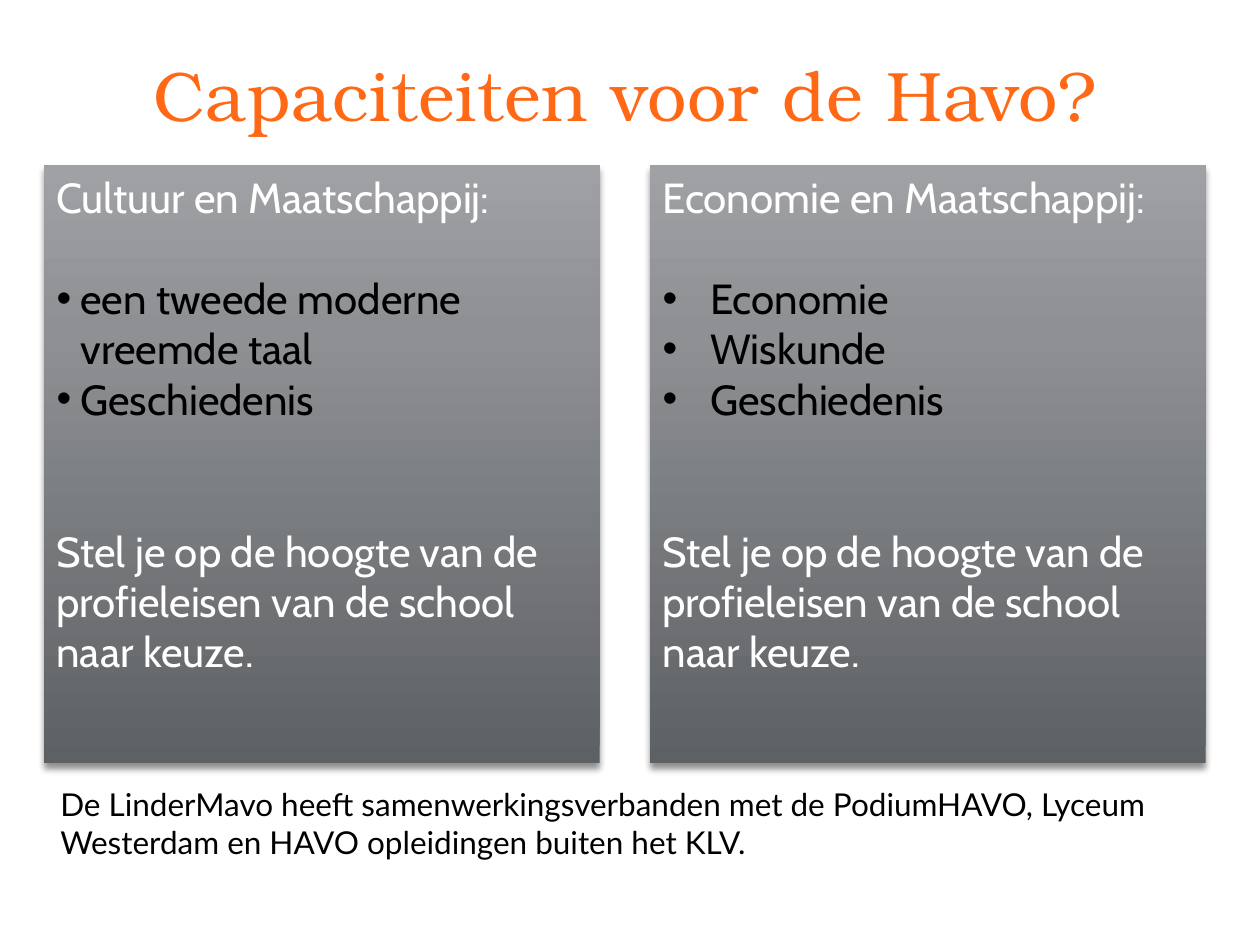
from dataclasses import dataclass

import lxml.etree
import pptx
import pptx.dml.color
import pptx.enum.shapes
import pptx.enum.text
import pptx.oxml.ns
import pptx.util
from pptx.util import Inches

qn = pptx.oxml.ns.qn


@dataclass(frozen=True)
class Theme:
    title_font: str = "TeX Gyre Bonum"
    panel_font: str = "Cabin"
    note_font: str = "Lato"
    title_size: int = 40
    panel_size: int = 24
    note_size: int = 18
    line_height: int = 29
    orange: str = "FF6815"
    black: str = "000000"
    white: str = "FFFFFF"
    panel_stops: tuple[tuple[int, str], ...] = ((0, "5E6164"), (72, "8E9093"), (100, "A0A1A4"))


@dataclass(frozen=True)
class Profile:
    name: str
    subjects: tuple[str, ...]
    bullet_indent: float


THEME = Theme()
ADVICE = "Stel je op de hoogte van de profieleisen van de school naar keuze."
PROFILES = (
    Profile("Cultuur en Maatschappij:", ("een tweede moderne vreemde taal", "Geschiedenis"), 0.19),
    Profile("Economie en Maatschappij:", ("Economie", "Wiskunde", "Geschiedenis"), 0.38),
)
PARTNERS = ("De LinderMavo heeft samenwerkingsverbanden met de PodiumHAVO, Lyceum "
            "Westerdam en HAVO opleidingen buiten het KLV.")
PANEL_LEFT, PANEL_TOP, PANEL_WIDTH, PANEL_HEIGHT = 0.35, 1.31, 4.41, 4.75
PANEL_STEP = 4.81


def style(paragraph, font_name: str, size: int, color: str) -> None:
    paragraph.font.name = font_name
    paragraph.font.size = pptx.util.Pt(size)
    paragraph.font.color.rgb = pptx.dml.color.RGBColor.from_string(color)


def add_color(parent, color: str):
    return lxml.etree.SubElement(parent, qn("a:srgbClr"), val=color)


def shade_panel(panel) -> None:
    """Give the panel its three-stop gradient and a soft shadow below it."""
    panel.fill.gradient()
    panel.fill.gradient_angle = 90
    stops = panel.element.spPr.find(qn("a:gradFill")).find(qn("a:gsLst"))
    for stop in list(stops):
        stops.remove(stop)
    for percent, color in THEME.panel_stops:
        add_color(lxml.etree.SubElement(stops, qn("a:gs"), pos=str(percent * 1000)), color)
    panel.line.fill.background()
    panel.shadow.inherit = False
    shadow = lxml.etree.SubElement(
        panel.element.spPr.find(qn("a:effectLst")), qn("a:outerShdw"),
        blurRad=str(pptx.util.Pt(4)), dist=str(pptx.util.Pt(3)), dir="5400000", rotWithShape="0")
    lxml.etree.SubElement(add_color(shadow, THEME.black), qn("a:alpha"), val="43000")


def add_bullet(paragraph, indent: float) -> None:
    properties = paragraph._p.get_or_add_pPr()
    properties.set("marL", str(Inches(indent)))
    properties.set("indent", str(-Inches(indent)))
    bullet_font = lxml.etree.Element(qn("a:buFont"), typeface="Arial")
    bullet = lxml.etree.Element(qn("a:buChar"), char="•")
    defaults = properties.find(qn("a:defRPr"))
    defaults.addprevious(bullet_font)
    defaults.addprevious(bullet)


def add_panel(slide, profile: Profile, left: float) -> None:
    panel = slide.shapes.add_shape(
        pptx.enum.shapes.MSO_SHAPE.RECTANGLE,
        Inches(left), Inches(PANEL_TOP), Inches(PANEL_WIDTH), Inches(PANEL_HEIGHT))
    shade_panel(panel)
    frame = panel.text_frame
    frame.word_wrap = True
    frame.vertical_anchor = pptx.enum.text.MSO_ANCHOR.TOP
    for index, text in enumerate((profile.name, *profile.subjects, ADVICE)):
        paragraph = frame.paragraphs[0] if index == 0 else frame.add_paragraph()
        paragraph.text = text
        paragraph.alignment = pptx.enum.text.PP_ALIGN.LEFT
        is_subject = 0 < index <= len(profile.subjects)
        if index == 1:
            paragraph.space_before = pptx.util.Pt(THEME.line_height)
        elif index > len(profile.subjects):
            paragraph.space_before = pptx.util.Pt(2 * THEME.line_height)
        style(paragraph, THEME.panel_font, THEME.panel_size,
              THEME.black if is_subject else THEME.white)
        if is_subject:
            add_bullet(paragraph, profile.bullet_indent)


def set_title(slide, text: str) -> None:
    title = slide.shapes.title
    title.left, title.top = Inches(0.2), Inches(0.36)
    title.width, title.height = Inches(9.53), Inches(0.77)
    title.text_frame.text = text
    title.text_frame.vertical_anchor = pptx.enum.text.MSO_ANCHOR.TOP
    heading = title.text_frame.paragraphs[0]
    heading.alignment = pptx.enum.text.PP_ALIGN.CENTER
    style(heading, THEME.title_font, THEME.title_size, THEME.orange)
    heading.runs[0]._r.get_or_add_rPr().set("spc", "50")


def add_note(slide, text: str) -> None:
    note = slide.shapes.add_textbox(Inches(0.38), Inches(6.18), Inches(9.21), Inches(0.71))
    note.text_frame.word_wrap = True
    note.text_frame.text = text
    style(note.text_frame.paragraphs[0], THEME.note_font, THEME.note_size, THEME.black)


def main() -> None:
    presentation = pptx.Presentation()
    presentation.slide_width, presentation.slide_height = Inches(10), Inches(7.5)
    slide = presentation.slides.add_slide(presentation.slide_layouts.get_by_name("Title Only"))
    set_title(slide, "Capaciteiten voor de Havo?")
    for column, profile in enumerate(PROFILES):
        add_panel(slide, profile, PANEL_LEFT + column * PANEL_STEP)
    add_note(slide, PARTNERS)
    presentation.save("out.pptx")


if __name__ == "__main__":
    main()
